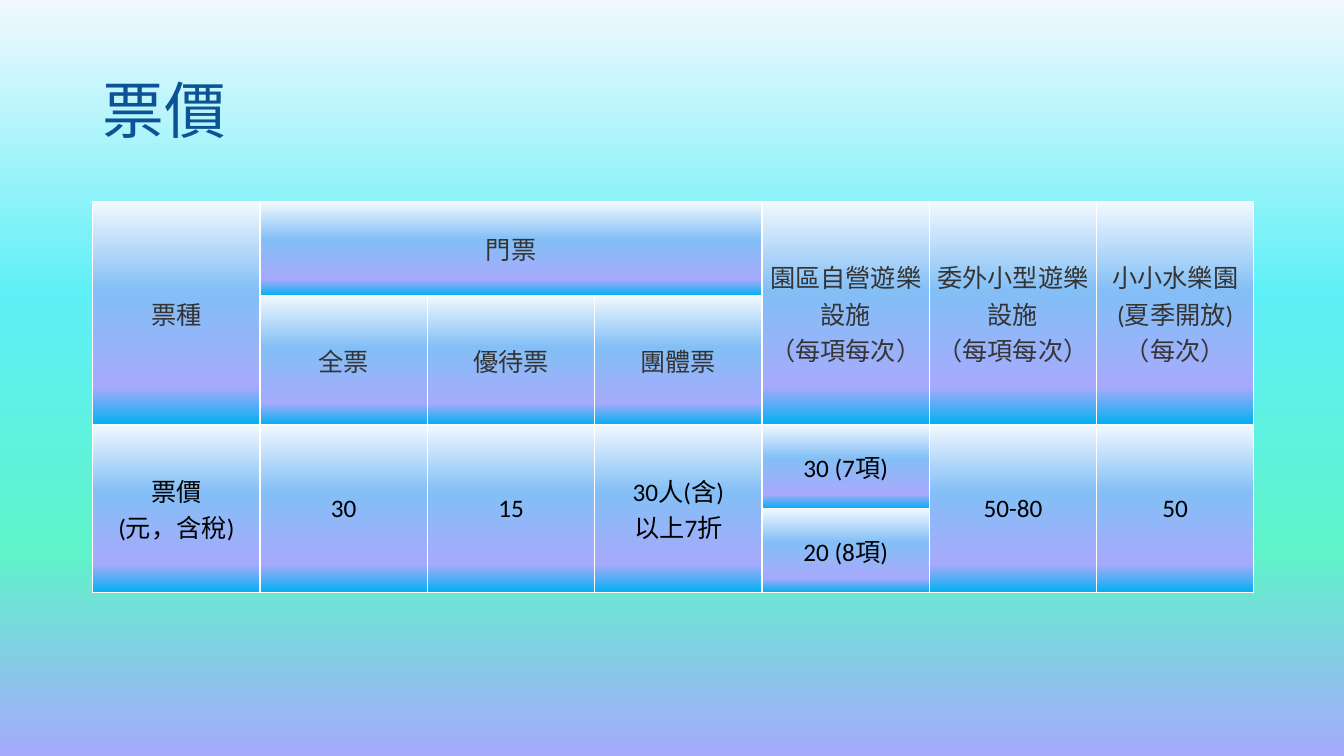
from dataclasses import dataclass

from lxml import etree
from pptx import Presentation
from pptx import util as u
from pptx.dml import color as dml
from pptx.enum import text as t
from pptx.oxml import ns

SLIDE_WIDTH, SLIDE_HEIGHT = u.Inches(13.33), u.Inches(7.5)
MARGIN = 0.069  # share of the slide's width
CONTENT_WIDTH = 1 - 2 * MARGIN
TITLE_TOP, TITLE_HEIGHT = 0.053, 0.193  # shares of the slide's height
TABLE_TOP = 0.267
COLUMN_SHARES = [0.1245] * 6 + [0.117]
ROW_SHARES = [0.124, 0.171, 0.111, 0.111]
CELL_INSET = u.Inches(0.03)

COLORS = {"title": "0B5394", "header": "343434", "price": "000000", "border": "FFFFFF"}
PAGE_GRADIENT = [(0, "F1F8FE"), (39, "5EF0F7"), (73, "5FF3CA"), (100, "A6AAFC")]
CELL_GRADIENT = [(0, "F1F8FE"), (40, "83BFF6"), (83, "A6AAFC"), (100, "00B0F0")]
LATIN_FONT, CJK_FONT = "Calibri", "Noto Sans CJK SC"


@dataclass(frozen=True)
class PriceCell:
    row: int
    column: int
    label: str
    row_span: int = 1
    column_span: int = 1


CELLS = [
    # Headers
    PriceCell(0, 0, "票種", row_span=2),
    PriceCell(0, 1, "門票", column_span=3),
    PriceCell(0, 4, "園區自營遊樂設施\n（每項每次）", row_span=2),
    PriceCell(0, 5, "委外小型遊樂設施\n（每項每次）", row_span=2),
    PriceCell(0, 6, "小小水樂園\n(夏季開放)\n（每次）", row_span=2),
    PriceCell(1, 1, "全票"),
    PriceCell(1, 2, "優待票"),
    PriceCell(1, 3, "團體票"),
    # Prices
    PriceCell(2, 0, "票價\n(元，含稅)", row_span=2),
    PriceCell(2, 1, "30", row_span=2),
    PriceCell(2, 2, "15", row_span=2),
    PriceCell(2, 3, "30人(含)\n以上7折", row_span=2),
    PriceCell(2, 4, "30 (7項)"),
    PriceCell(2, 5, "50-80", row_span=2),
    PriceCell(2, 6, "50", row_span=2),
    PriceCell(3, 4, "20 (8項)"),
]


def across(share: float) -> int:
    return round(SLIDE_WIDTH * share)


def down(share: float) -> int:
    return round(SLIDE_HEIGHT * share)


def add_element(parent, tag: str, **attributes: str):
    return etree.SubElement(parent, ns.qn(tag), attributes)


def paint_gradient(fill, owner, stops: list[tuple[int, str]]) -> None:
    """Fill from top to bottom; owner is the XML element that holds the fill."""
    fill.gradient()
    fill.gradient_angle = 270
    stop_list = owner.find(".//" + ns.qn("a:gsLst"))
    for old_stop in list(stop_list):
        stop_list.remove(old_stop)
    for percent, color in stops:
        stop = add_element(stop_list, "a:gs", pos=str(percent * 1000))
        add_element(stop, "a:srgbClr", val=color)


def write_text(frame, content: str, *, size: float, color: str, font: str = LATIN_FONT,
               align=t.PP_ALIGN.LEFT, line_spacing: float = 1.0) -> None:
    frame.word_wrap = True
    paragraph = frame.paragraphs[0]
    paragraph.alignment = align
    paragraph.line_spacing = line_spacing
    for index, line in enumerate(content.split("\n")):
        if index:
            paragraph.add_line_break()
        run = paragraph.add_run()
        run.text = line
        run.font.size = u.Pt(size)
        run.font.name = font
        run.font.color.rgb = dml.RGBColor.from_string(COLORS[color])
        add_element(run.font._element, "a:ea", typeface=CJK_FONT)


def draw_borders(cell) -> None:
    properties = cell._tc.get_or_add_tcPr()
    for index, side in enumerate("LRTB"):
        line = add_element(properties, f"a:ln{side}", w=str(u.Pt(1)))
        solid = add_element(line, "a:solidFill")
        add_element(solid, "a:srgbClr", val=COLORS["border"])
        properties.insert(index, line)


def draw_title(slide) -> None:
    box = slide.shapes.add_textbox(across(MARGIN), down(TITLE_TOP),
                                   across(CONTENT_WIDTH), down(TITLE_HEIGHT))
    box.text_frame.vertical_anchor = t.MSO_ANCHOR.MIDDLE
    write_text(box.text_frame, "票價", size=44, color="title", font=CJK_FONT, line_spacing=0.9)


def draw_cell(table, entry: PriceCell) -> None:
    cell = table.cell(entry.row, entry.column)
    if entry.row_span * entry.column_span > 1:
        cell.merge(table.cell(entry.row + entry.row_span - 1,
                              entry.column + entry.column_span - 1))
    cell.margin_left = cell.margin_right = CELL_INSET
    cell.margin_top = cell.margin_bottom = CELL_INSET
    cell.vertical_anchor = t.MSO_ANCHOR.MIDDLE
    paint_gradient(cell.fill, cell._tc, CELL_GRADIENT)
    write_text(cell.text_frame, entry.label, size=18, align=t.PP_ALIGN.CENTER,
               color="header" if entry.row < 2 else "price")


def draw_price_table(slide) -> None:
    table = slide.shapes.add_table(
        len(ROW_SHARES), len(COLUMN_SHARES), across(MARGIN), down(TABLE_TOP),
        across(sum(COLUMN_SHARES)), down(sum(ROW_SHARES))).table
    table.first_row = table.horz_banding = False
    for column, share in zip(table.columns, COLUMN_SHARES):
        column.width = across(share)
    for row, share in zip(table.rows, ROW_SHARES):
        row.height = down(share)
    for cell in table.iter_cells():
        cell.fill.background()
        draw_borders(cell)
    for entry in CELLS:
        draw_cell(table, entry)


def main() -> None:
    presentation = Presentation()
    presentation.slide_width, presentation.slide_height = SLIDE_WIDTH, SLIDE_HEIGHT
    slide = presentation.slides.add_slide(presentation.slide_layouts[6])
    paint_gradient(slide.background.fill, slide.element, PAGE_GRADIENT)
    draw_title(slide)
    draw_price_table(slide)
    presentation.save("out.pptx")


if __name__ == "__main__":
    main()
